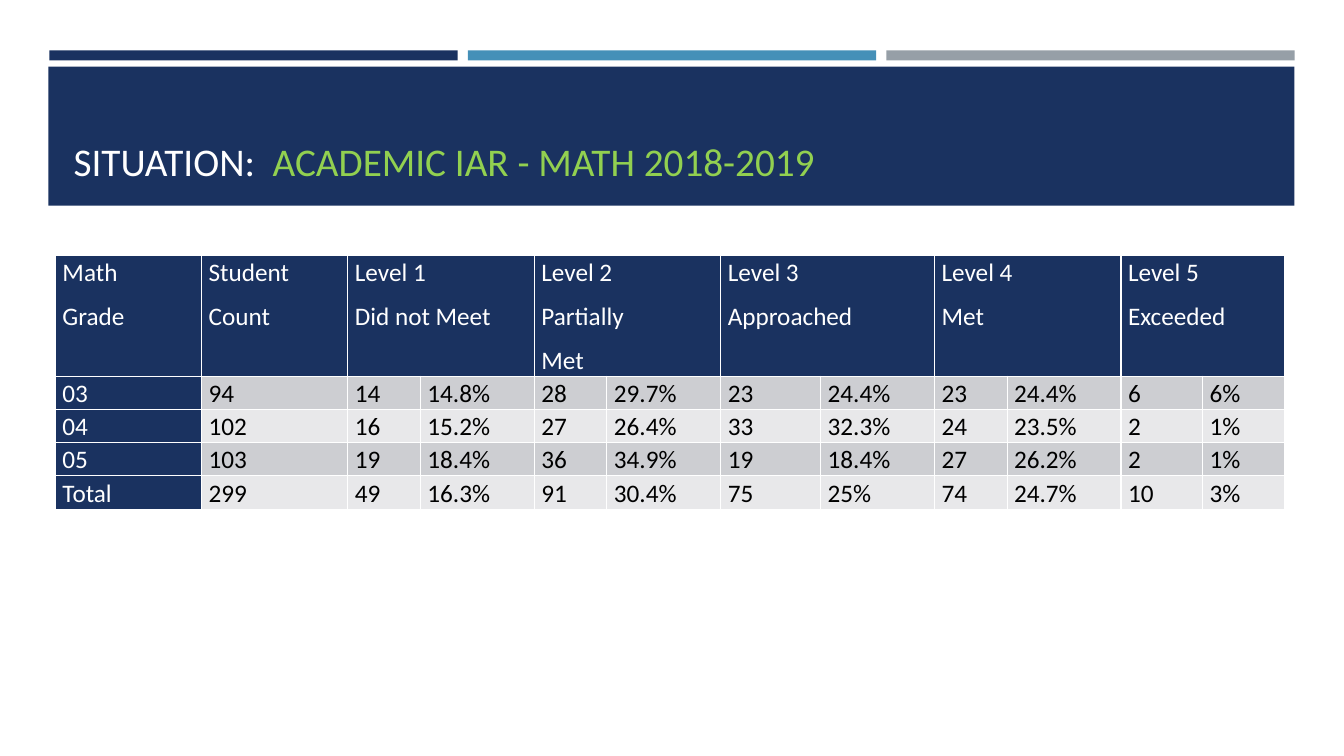
import pptx
import pptx.dml.color
import pptx.enum.shapes
import pptx.enum.text
import pptx.oxml
import pptx.oxml.ns
import pptx.util

Inches = pptx.util.Inches
Pt = pptx.util.Pt
RGBColor = pptx.dml.color.RGBColor

NAVY = RGBColor(0x1A, 0x32, 0x60)
BLUE = RGBColor(0x45, 0x90, 0xB8)
GRAY = RGBColor(0x96, 0x9F, 0xA7)
GREEN = RGBColor(0x92, 0xD0, 0x50)
WHITE = RGBColor(0xFF, 0xFF, 0xFF)
BLACK = RGBColor(0x00, 0x00, 0x00)
ROW_FILLS = (RGBColor(0xCD, 0xCE, 0xD2), RGBColor(0xE8, 0xE8, 0xEA))
FONT = "Calibri"

COLUMN_WIDTHS = (1.45, 1.45, 0.72, 1.13, 0.72, 1.13, 0.99, 1.13, 0.72, 1.13, 0.81, 0.81)
HEADER_HEIGHT = 1.2
ROW_HEIGHT = 0.33
HEADINGS = ("Math\nGrade", "Student\nCount", "Level 1\nDid not Meet", "Level 2\nPartially\nMet",
            "Level 3\nApproached", "Level 4\nMet", "Level 5\nExceeded")
RESULTS = (
    ("03", "94", "14", "14.8%", "28", "29.7%", "23", "24.4%", "23", "24.4%", "6", "6%"),
    ("04", "102", "16", "15.2%", "27", "26.4%", "33", "32.3%", "24", "23.5%", "2", "1%"),
    ("05", "103", "19", "18.4%", "36", "34.9%", "19", "18.4%", "27", "26.2%", "2", "1%"),
    ("Total", "299", "49", "16.3%", "91", "30.4%", "75", "25%", "74", "24.7%", "10", "3%"),
)


def add_bar(slide, left, top, width, height, color):
    """Add a plain filled rectangle."""
    shape = slide.shapes.add_shape(pptx.enum.shapes.MSO_SHAPE.RECTANGLE, Inches(left),
                                   Inches(top), Inches(width), Inches(height))
    shape.shadow.inherit = False
    shape.fill.solid()
    shape.fill.fore_color.rgb = color
    shape.line.fill.background()


def add_stripes(slide, left, top, width, height):
    """Add three equal stripes across the box."""
    gap = 0.1
    stripe_width = (width - 2 * gap) / 3
    for index, color in enumerate((NAVY, BLUE, GRAY)):
        add_bar(slide, left + index * (stripe_width + gap), top, stripe_width, height, color)


def add_title_band(slide, left, top, width, height):
    """Add the navy band and set the two-colour title on it."""
    add_bar(slide, left, top, width, height, NAVY)
    title = slide.shapes.title
    title.left, title.top = Inches(left + 0.15), Inches(top + 0.14)
    title.width, title.height = Inches(width - 0.3), Inches(height - 0.3)
    title.element.getparent().append(title.element)
    title.text_frame.vertical_anchor = pptx.enum.text.MSO_ANCHOR.BOTTOM
    paragraph = title.text_frame.paragraphs[0]
    paragraph.alignment = pptx.enum.text.PP_ALIGN.LEFT
    for text, color in (("SITUATION:  ", WHITE), ("ACADEMIC IAR - MATH 2018-2019", GREEN)):
        run = paragraph.add_run()
        run.text = text
        format_font(run.font, 28, color)


def format_font(font, size, color):
    """Set the typeface, size and colour."""
    font.name = FONT
    font.size = Pt(size)
    font.bold = False
    font.color.rgb = color


def add_borders(cell):
    """Draw thin white borders on every side of a cell."""
    properties = cell._tc.get_or_add_tcPr()
    for index, side in enumerate(("lnL", "lnR", "lnT", "lnB")):
        border = pptx.oxml.parse_xml(
            f'<a:{side} {pptx.oxml.ns.nsdecls("a")} w="12700"><a:solidFill>'
            f'<a:srgbClr val="{WHITE}"/></a:solidFill></a:{side}>')
        properties.insert(index, border)


def fill_cell(cell, text, fill, color):
    """Write and format one table cell."""
    cell.margin_left = cell.margin_right = Inches(0.07)
    cell.margin_top = cell.margin_bottom = 0
    cell.fill.solid()
    cell.fill.fore_color.rgb = fill
    add_borders(cell)
    cell.text_frame.text = text
    for paragraph in cell.text_frame.paragraphs:
        paragraph.line_spacing = 1.07
        paragraph.space_after = Pt(8)
        format_font(paragraph.font, 18, color)
        for run in paragraph.runs:
            format_font(run.font, 18, color)


def add_results_table(slide, left, top):
    """Add the table of results by grade and level."""
    height = HEADER_HEIGHT + len(RESULTS) * ROW_HEIGHT
    table = slide.shapes.add_table(len(RESULTS) + 1, len(COLUMN_WIDTHS), Inches(left), Inches(top),
                                   Inches(sum(COLUMN_WIDTHS)), Inches(height)).table
    for column, width in zip(table.columns, COLUMN_WIDTHS):
        column.width = Inches(width)
    for index, row in enumerate(table.rows):
        row.height = Inches(ROW_HEIGHT if index else HEADER_HEIGHT)

    for column in range(len(COLUMN_WIDTHS)):
        fill_cell(table.cell(0, column), "", NAVY, WHITE)
    for index, heading in enumerate(HEADINGS):
        column = index if index < 2 else 2 * index - 2
        if index >= 2:
            table.cell(0, column).merge(table.cell(0, column + 1))
        fill_cell(table.cell(0, column), heading, NAVY, WHITE)

    for row, values in enumerate(RESULTS):
        for column, value in enumerate(values):
            fill, color = (ROW_FILLS[row % 2], BLACK) if column else (NAVY, WHITE)
            fill_cell(table.cell(row + 1, column), value, fill, color)


def main():
    """Build and save the presentation."""
    presentation = pptx.Presentation()
    presentation.slide_width = Inches(13.33)
    presentation.slide_height = Inches(7.5)
    slide = presentation.slides.add_slide(presentation.slide_layouts[5])
    add_stripes(slide, 0.49, 0.5, 12.35, 0.1)
    add_title_band(slide, 0.48, 0.66, 12.36, 1.38)
    add_results_table(slide, 0.55, 2.53)
    presentation.save("out.pptx")


if __name__ == "__main__":
    main()
